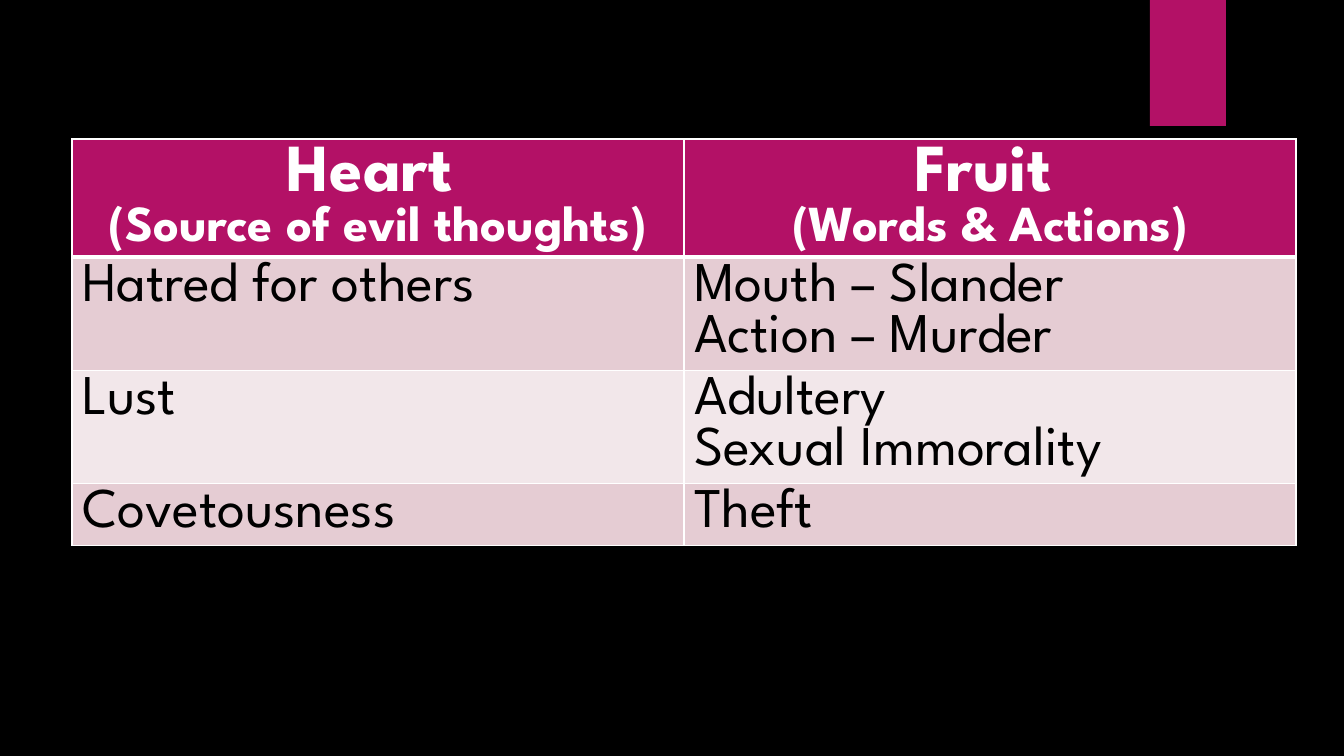
import dataclasses

import pptx
import pptx.dml.color
import pptx.enum.shapes
import pptx.enum.text
import pptx.oxml.ns
import pptx.slide
import pptx.table
import pptx.text.text
import pptx.util
from lxml import etree

EMU_PER_PX = 914400 / 100.8
FONT = "League Spartan"
COLORS = {
    "background": "000000",
    "accent": "B31166",
    "band_dark": "E5CCD3",
    "band_light": "F2E7EA",
    "light": "FFFFFF",
    "dark": "000000",
}


@dataclasses.dataclass(frozen=True)
class Span:
    text: str
    size: int = 40


Line = tuple[Span, ...]
CellLines = tuple[Line, ...]


@dataclasses.dataclass(frozen=True)
class Row:
    height: int
    fill: str
    cells: tuple[CellLines, CellLines]
    heading: bool = False


ROWS = (
    Row(117, "accent", (
        ((Span("Heart", 48), Span(" ", 44)), (Span("(Source of evil thoughts)", 36),)),
        ((Span("Fruit", 48), Span(" ", 36)), (Span("(Words & Actions)", 36),)),
    ), heading=True),
    Row(113, "band_dark", (
        ((Span("Hatred for others"),),),
        ((Span("Mouth – Slander"),), (Span("Action – Murder"),)),
    )),
    Row(113, "band_light", (
        ((Span("Lust"),),),
        ((Span("Adultery"),), (Span("Sexual Immorality"),)),
    )),
    Row(62, "band_dark", (
        ((Span("Covetousness"),),),
        ((Span("Theft"),),),
    )),
)
TABLE_LEFT, TABLE_TOP, COLUMN_WIDTH = 72, 139, 612


def px(length: int) -> pptx.util.Emu:
    return pptx.util.Emu(round(length * EMU_PER_PX))


def color(name: str) -> pptx.dml.color.RGBColor:
    return pptx.dml.color.RGBColor.from_string(COLORS[name])


def add_span(
    para: pptx.text.text._Paragraph, text: str, *, size: int, fill: str, bold: bool
) -> None:
    span = para.add_run()
    span.text = text
    span.font.name = FONT
    span.font.size = pptx.util.Pt(size)
    span.font.bold = bold
    span.font.color.rgb = color(fill)


def add_border(cell: pptx.table._Cell, side: str, width: int) -> None:
    qn = pptx.oxml.ns.qn
    properties = cell._tc.get_or_add_tcPr()
    border = etree.SubElement(properties, qn(f"a:ln{side}"), w=str(pptx.util.Pt(width)))
    solid = etree.SubElement(border, qn("a:solidFill"))
    etree.SubElement(solid, qn("a:srgbClr"), val=COLORS["light"])


def fill_cell(
    cell: pptx.table._Cell, lines: CellLines, row: Row, borders: dict[str, int]
) -> None:
    for side, width in borders.items():
        add_border(cell, side, width)
    cell.fill.solid()
    cell.fill.fore_color.rgb = color(row.fill)
    frame = cell.text_frame
    for index, line in enumerate(lines):
        para = frame.add_paragraph() if index else frame.paragraphs[0]
        if row.heading:
            para.alignment = pptx.enum.text.PP_ALIGN.CENTER
        for span in line:
            add_span(
                para, span.text, size=span.size,
                fill="light" if row.heading else "dark", bold=row.heading,
            )


def add_tab(page: pptx.slide.Slide) -> None:
    tab = page.shapes.add_shape(
        pptx.enum.shapes.MSO_SHAPE.RECTANGLE, px(1150), px(0), px(76), px(126)
    )
    tab.shadow.inherit = False
    tab.fill.solid()
    tab.fill.fore_color.rgb = color("accent")
    tab.line.fill.background()


def add_comparison(page: pptx.slide.Slide) -> None:
    columns = len(ROWS[0].cells)
    table = page.shapes.add_table(
        len(ROWS), columns, px(TABLE_LEFT), px(TABLE_TOP),
        px(COLUMN_WIDTH * columns), px(sum(row.height for row in ROWS)),
    ).table
    for column in table.columns:
        column.width = px(COLUMN_WIDTH)
    for index, row in enumerate(ROWS):
        table.rows[index].height = px(row.height)
        borders = {
            "L": 1,
            "R": 1,
            "T": 3 if index and ROWS[index - 1].heading else 1,
            "B": 3 if row.heading else 1,
        }
        for cell, lines in zip(table.rows[index].cells, row.cells):
            fill_cell(cell, lines, row, borders)


def main() -> None:
    deck = pptx.Presentation()
    deck.slide_width, deck.slide_height = px(1344), px(756)
    page = deck.slides.add_slide(deck.slide_layouts[6])
    page.background.fill.solid()
    page.background.fill.fore_color.rgb = color("background")
    add_tab(page)
    add_comparison(page)
    deck.save("out.pptx")


if __name__ == "__main__":
    main()
